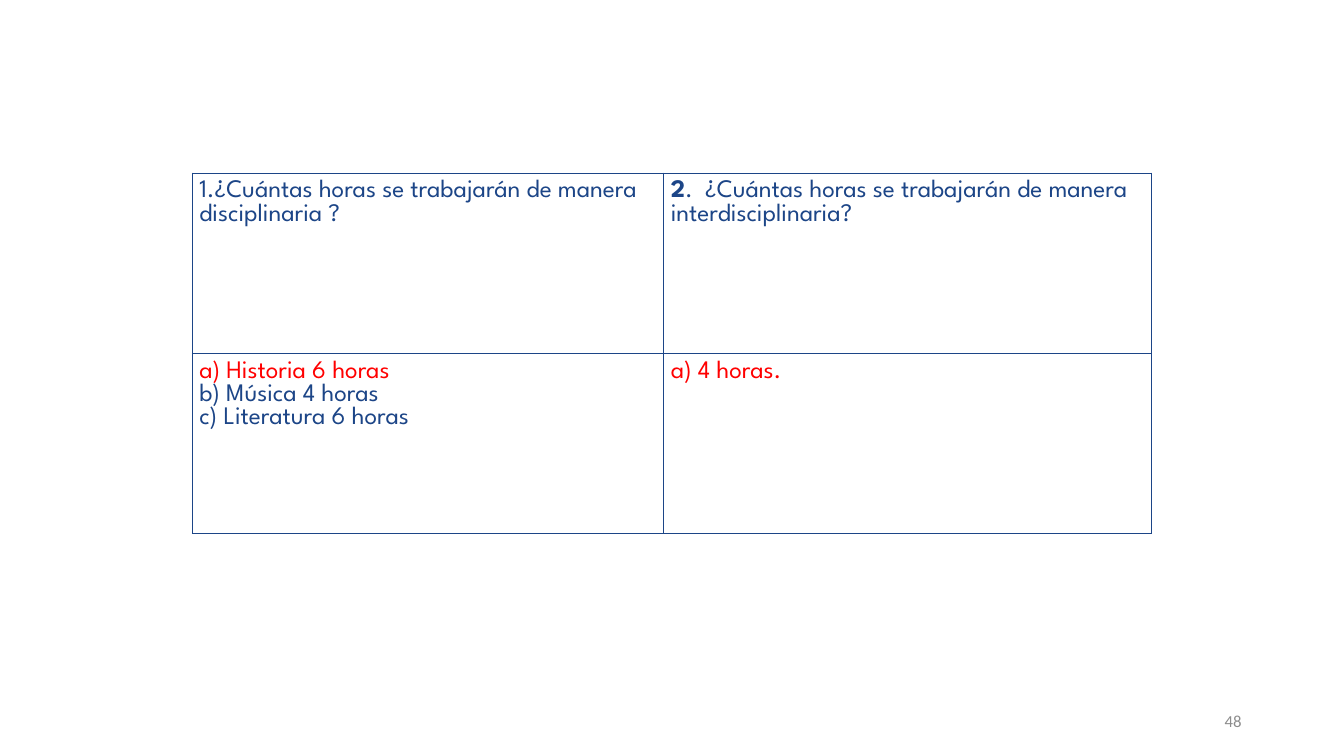
"""Build a slide with a table of disciplinary and interdisciplinary hours."""
import pptx
import pptx.dml.color
import pptx.enum.text
import pptx.oxml
import pptx.oxml.ns
import pptx.util
from lxml import etree

Pt = pptx.util.Pt
COLOURS = {"blue": "1C4587", "red": "FF0000", "grey": "8C8C8C"}
QUESTIONS = [
    [("blue", [("¿Cuántas horas se trabajarán de manera  disciplinaria ?", False)])],
    [("blue", [("2", True), (".  ¿Cuántas horas se trabajarán de manera interdisciplinaria?", False)])],
]
ANSWERS = [
    [
        ("red", [("a) Historia 6 horas", False)]),
        ("blue", [("b) Música 4 horas", False)]),
        ("blue", [("c) Literatura 6 horas", False)]),
    ],
    [("red", [("a) 4 horas.", False)])],
]
ROWS = [QUESTIONS, ANSWERS]
PAGE_NUMBER = "48"
COLUMN_WIDTHS = [336.75, 348.5]
ROW_HEIGHT = 128.7
TABLE_LEFT, TABLE_TOP = 137.4, 123.8
CELL_MARGIN = 5


def style(font, name, size, colour):
    font.name = name
    font.size = Pt(size)
    font.color.rgb = pptx.dml.color.RGBColor.from_string(COLOURS[colour])


def add_borders(cell):
    properties = cell._tc.get_or_add_tcPr()
    for side in ("a:lnL", "a:lnR", "a:lnT", "a:lnB"):
        line = etree.SubElement(properties, pptx.oxml.ns.qn(side), w=str(Pt(1)))
        fill = etree.SubElement(line, pptx.oxml.ns.qn("a:solidFill"))
        etree.SubElement(fill, pptx.oxml.ns.qn("a:srgbClr"), val=COLOURS["blue"])


def add_number(para):
    properties = para._p.get_or_add_pPr()
    properties.set("marL", "0")
    properties.set("indent", "0")
    number = pptx.oxml.parse_xml(
        f'<a:buAutoNum {pptx.oxml.ns.nsdecls("a")} type="arabicPeriod"/>')
    properties.insert(0, number)


def fill_cell(cell, paragraphs):
    cell.margin_left = cell.margin_right = Pt(CELL_MARGIN)
    cell.margin_top = cell.margin_bottom = Pt(CELL_MARGIN)
    add_borders(cell)
    cell.fill.background()
    frame = cell.text_frame
    for index, (colour, spans) in enumerate(paragraphs):
        para = frame.add_paragraph() if index else frame.paragraphs[0]
        style(para.font, "League Spartan", 18, colour)
        for text, bold in spans:
            span = para.add_run()
            span.text = text
            span.font.bold = bold


def add_hours_table(page):
    table = page.shapes.add_table(
        len(ROWS), len(COLUMN_WIDTHS), Pt(TABLE_LEFT), Pt(TABLE_TOP),
        Pt(sum(COLUMN_WIDTHS)), Pt(ROW_HEIGHT * len(ROWS))).table
    table.first_row = table.horz_banding = False
    for column, width in zip(table.columns, COLUMN_WIDTHS):
        column.width = Pt(width)
    for row, contents in zip(table.rows, ROWS):
        row.height = Pt(ROW_HEIGHT)
        for cell, paragraphs in zip(row.cells, contents):
            fill_cell(cell, paragraphs)
    add_number(table.cell(0, 0).text_frame.paragraphs[0])


def add_page_number(page):
    box = page.shapes.add_textbox(Pt(678), Pt(500.5), Pt(216), Pt(28.75))
    frame = box.text_frame
    frame.word_wrap = True
    frame.vertical_anchor = pptx.enum.text.MSO_ANCHOR.MIDDLE
    para = frame.paragraphs[0]
    para.text = PAGE_NUMBER
    para.alignment = pptx.enum.text.PP_ALIGN.RIGHT
    style(para.font, "Calibri", 12, "grey")


def main():
    deck = pptx.Presentation()
    deck.slide_width, deck.slide_height = Pt(960), Pt(540)
    page = deck.slides.add_slide(deck.slide_layouts[6])
    add_page_number(page)
    add_hours_table(page)
    deck.save("out.pptx")


if __name__ == "__main__":
    main()
